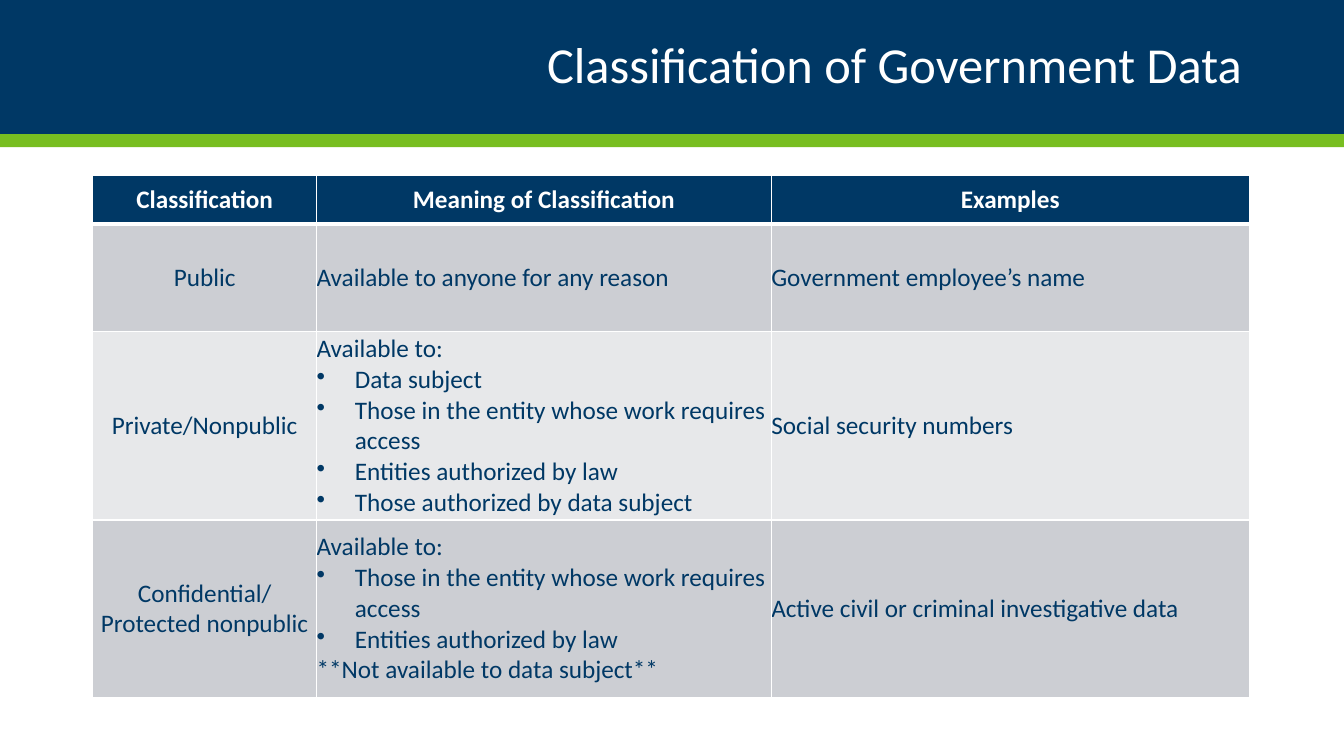
import pptx
import pptx.dml.color
import pptx.enum.shapes
import pptx.enum.text
import pptx.oxml.ns
import pptx.util
from dataclasses import dataclass
from lxml import etree

Inches = pptx.util.Inches
ALIGN = pptx.enum.text.PP_ALIGN
MIDDLE = pptx.enum.text.MSO_ANCHOR.MIDDLE


@dataclass(frozen=True)
class Theme:
    font: str = "Calibri"
    title_size: int = 36
    table_size: int = 18
    navy: str = "003865"
    green: str = "78BE21"
    white: str = "FFFFFF"
    dark_band: str = "CCCED3"
    light_band: str = "E7E8EA"


THEME = Theme()
BULLET = "• "  # marks a bulleted line in the table content
COLUMN_WIDTHS = (2.22, 4.51, 4.74)
ROW_HEIGHTS = (0.48, 1.07, 1.87, 1.76)
ROWS = [
    ("Classification", "Meaning of Classification", "Examples"),
    ("Public", "Available to anyone for any reason", "Government employee’s name"),
    (
        "Private/Nonpublic",
        "Available to:\n"
        "• Data subject\n"
        "• Those in the entity whose work requires access\n"
        "• Entities authorized by law\n"
        "• Those authorized by data subject",
        "Social security numbers",
    ),
    (
        "Confidential/\nProtected nonpublic",
        "Available to:\n"
        "• Those in the entity whose work requires access\n"
        "• Entities authorized by law\n"
        "**Not available to data subject**",
        "Active civil or criminal investigative data",
    ),
]


def rgb(color):
    return pptx.dml.color.RGBColor.from_string(color)


def format_font(paragraph, size, color, bold=False):
    font = paragraph.font
    font.name = THEME.font
    font.size = pptx.util.Pt(size)
    font.bold = bold
    font.color.rgb = rgb(color)


def add_band(slide, top, height, color):
    """Add a full-width band of the slide header."""
    shape = slide.shapes.add_shape(
        pptx.enum.shapes.MSO_SHAPE.RECTANGLE, 0, Inches(top), Inches(13.33), Inches(height)
    )
    shape.shadow.inherit = False
    shape.fill.solid()
    shape.fill.fore_color.rgb = rgb(color)
    shape.line.fill.background()


def place_title(slide, text):
    title = slide.shapes.title
    title.left, title.top = Inches(0.92), Inches(0.17)
    title.width, title.height = Inches(11.5), Inches(1)
    frame = title.text_frame
    frame.text = text
    frame.auto_size = pptx.enum.text.MSO_AUTO_SIZE.NONE
    frame.vertical_anchor = MIDDLE
    paragraph = frame.paragraphs[0]
    paragraph.alignment = ALIGN.RIGHT
    paragraph.line_spacing = 0.9
    format_font(paragraph, THEME.title_size, THEME.white)
    # Bring the title in front of the bands
    title.element.getparent().append(title.element)


def set_bullet(paragraph):
    properties = paragraph._p.get_or_add_pPr()
    properties.set("marL", str(Inches(0.38)))
    properties.set("indent", str(-Inches(0.38)))
    etree.SubElement(properties, pptx.oxml.ns.qn("a:buChar")).set("char", BULLET.strip())


def set_borders(cell, bottom_width):
    """Draw white borders, one point wide except at the bottom."""
    properties = cell._tc.get_or_add_tcPr()
    widths = {"lnL": 1, "lnR": 1, "lnT": 1, "lnB": bottom_width}
    for position, (side, width) in enumerate(widths.items()):
        line = etree.Element(pptx.oxml.ns.qn(f"a:{side}"), w=str(pptx.util.Pt(width)))
        fill = etree.SubElement(line, pptx.oxml.ns.qn("a:solidFill"))
        etree.SubElement(fill, pptx.oxml.ns.qn("a:srgbClr")).set("val", THEME.white)
        properties.insert(position, line)


def fill_cell(cell, text, fill, color, centered, header):
    cell.margin_left = cell.margin_right = cell.margin_top = cell.margin_bottom = 0
    cell.vertical_anchor = MIDDLE
    cell.fill.solid()
    cell.fill.fore_color.rgb = rgb(fill)
    set_borders(cell, 3 if header else 1)
    lines = text.split("\n")
    cell.text = "\n".join(line.removeprefix(BULLET) for line in lines)
    for line, paragraph in zip(lines, cell.text_frame.paragraphs):
        paragraph.alignment = ALIGN.CENTER if centered else ALIGN.LEFT
        format_font(paragraph, THEME.table_size, color, header)
        if line.startswith(BULLET):
            set_bullet(paragraph)


def add_classification_table(slide):
    table = slide.shapes.add_table(
        len(ROWS), len(COLUMN_WIDTHS), Inches(0.92), Inches(1.74),
        Inches(sum(COLUMN_WIDTHS)), Inches(sum(ROW_HEIGHTS)),
    ).table
    for column, width in zip(table.columns, COLUMN_WIDTHS):
        column.width = Inches(width)
    for row_index, (row, height) in enumerate(zip(table.rows, ROW_HEIGHTS)):
        row.height = Inches(height)
        header = row_index == 0
        band = THEME.dark_band if row_index % 2 else THEME.light_band
        fill, color = (THEME.navy, THEME.white) if header else (band, THEME.navy)
        for column_index, text in enumerate(ROWS[row_index]):
            centered = header or column_index == 0
            fill_cell(row.cells[column_index], text, fill, color, centered, header)


def main():
    presentation = pptx.Presentation()
    presentation.slide_width = Inches(13.33)
    presentation.slide_height = Inches(7.5)
    slide = presentation.slides.add_slide(presentation.slide_layouts[5])

    # Header
    add_band(slide, 0, 1.33, THEME.navy)
    add_band(slide, 1.33, 0.13, THEME.green)
    place_title(slide, "Classification of Government Data")

    # Table
    add_classification_table(slide)
    presentation.save("out.pptx")


if __name__ == "__main__":
    main()
